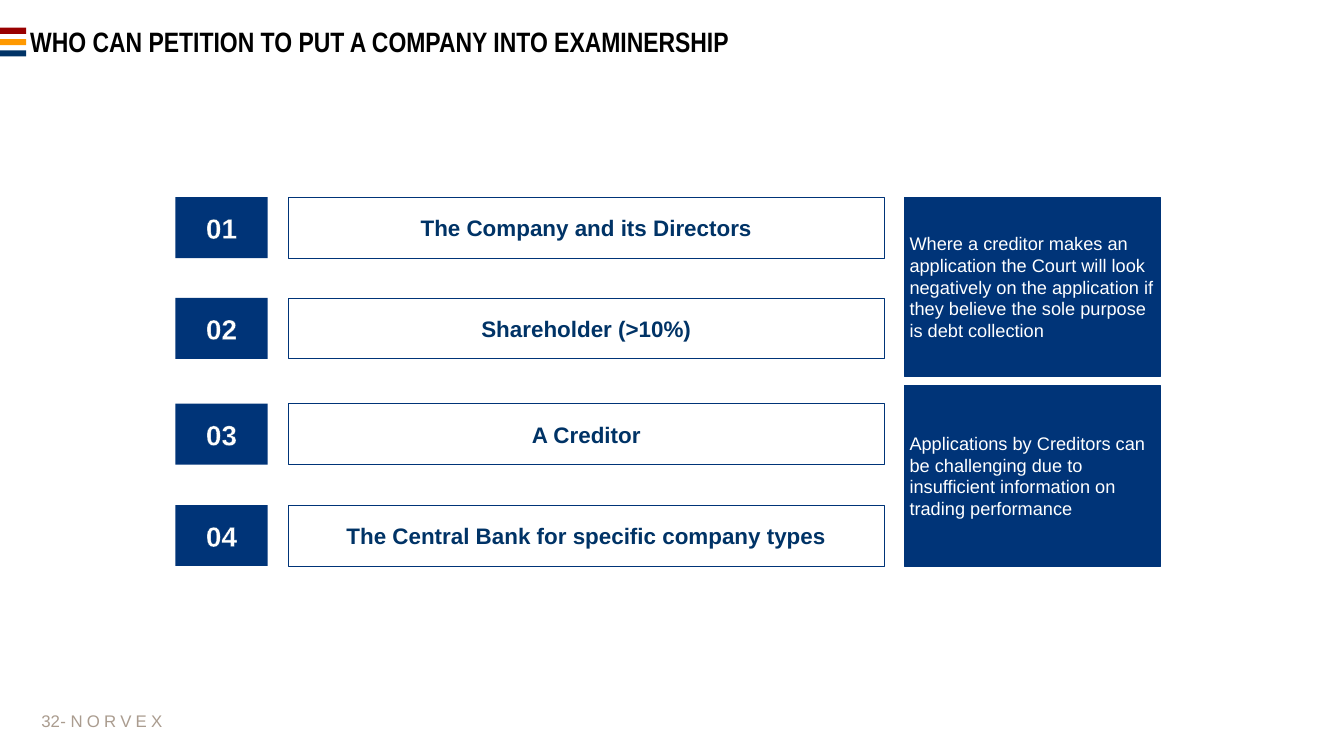
"""Build the slide on who can petition to put a company into examinership."""
from dataclasses import dataclass

from lxml import etree
from pptx import Presentation
from pptx.dml.color import RGBColor
from pptx.enum.shapes import MSO_SHAPE
from pptx.enum.text import MSO_ANCHOR, MSO_AUTO_SIZE, PP_ALIGN
from pptx.oxml.ns import qn
from pptx.util import Inches, Pt

RECT = MSO_SHAPE.RECTANGLE
MIDDLE = MSO_ANCHOR.MIDDLE
NO_FIT = MSO_AUTO_SIZE.NONE
LEFT, CENTER, RIGHT = PP_ALIGN.LEFT, PP_ALIGN.CENTER, PP_ALIGN.RIGHT


@dataclass(frozen=True)
class Theme:
    blue: str = "003478"
    navy: str = "003366"
    red: str = "990000"
    orange: str = "FF9900"
    white: str = "FFFFFF"
    black: str = "000000"
    taupe: str = "AA9C8F"
    font: str = "Arial"
    title_font: str = "Arial Narrow"
    title_size: int = 40
    number_size: int = 40
    label_size: int = 32
    note_size: int = 26
    footer_size: int = 24


theme = Theme()


def add_box(x, y, w, h, fill, line=None):
    sp = slide.shapes.add_shape(RECT, Inches(x), Inches(y), Inches(w), Inches(h))
    sp.shadow.inherit = False
    sp.fill.solid()
    sp.fill.fore_color.rgb = RGBColor.from_string(fill)
    if line:
        sp.line.color.rgb = RGBColor.from_string(line)
        sp.line.width = Pt(1)
    else:
        sp.line.fill.background()
    return sp


def write(sp, text, size, color, align=LEFT, bold=False, font=theme.font, wrap=True):
    tf = sp.text_frame
    tf.word_wrap = wrap
    tf.auto_size = NO_FIT
    tf.vertical_anchor = MIDDLE
    p = tf.paragraphs[0]
    p.alignment = align
    p.font.name = font
    p.font.size = Pt(size)
    p.font.bold = bold
    p.font.color.rgb = RGBColor.from_string(color)
    r = p.add_run()
    r.text = text
    return p


prs = Presentation()
prs.slide_width = Inches(26.67)
prs.slide_height = Inches(15)
slide = prs.slides.add_slide(prs.slide_layouts[5])

for i, color in enumerate((theme.red, theme.orange, theme.navy)):
    add_box(0, 0.55 + 0.225 * i, 0.52, 0.12, color)

title = slide.shapes.title
title.left, title.top = Inches(0.5), Inches(0.46)
title.width, title.height = Inches(25.67), Inches(0.79)
p = write(title, "WHO CAN PETITION TO PUT A COMPANY INTO EXAMINERSHIP",
          theme.title_size, theme.black, bold=True, font=theme.title_font)
p.line_spacing = 0.9

petitioners = [
    (3.91, "The Company and its Directors"),
    (5.91, "Shareholder (>10%)"),
    (8.01, "A Creditor"),
    (10.02, "The Central Bank for specific company types"),
]
for n, (y, label) in enumerate(petitioners, 1):
    sp = add_box(3.48, y, 1.83, 1.21, theme.blue)
    p = write(sp, f"{n:02d}", theme.number_size, theme.white, CENTER, True)
    outline = etree.Element(qn("a:ln"), w=str(Pt(0.75)))
    fill = etree.SubElement(outline, qn("a:solidFill"))
    etree.SubElement(fill, qn("a:srgbClr"), val=theme.navy)
    p.runs[0]._r.get_or_add_rPr().insert(0, outline)

    sp = add_box(5.72, y, 11.83, 1.21, theme.white, theme.blue)
    write(sp, label, theme.label_size, theme.navy, CENTER, True)

notes = [
    (3.91, 3.56, "Where a creditor makes an application the Court will look negatively "
                 "on the application if they believe the sole purpose is debt collection"),
    (7.64, 3.6, "Applications by Creditors can be challenging due to insufficient "
                "information on trading performance"),
]
for y, h, text in notes:
    sp = add_box(17.95, y, 5.07, h, theme.blue, theme.blue)
    write(sp, text, theme.note_size, theme.white)

page = slide.shapes.add_textbox(Inches(0.44), Inches(13.9), Inches(0.75), Inches(0.8))
page.text_frame.margin_left = page.text_frame.margin_right = 0
write(page, "32", theme.footer_size, theme.taupe, RIGHT)

footer = slide.shapes.add_textbox(Inches(1.1), Inches(13.9), Inches(2.29), Inches(0.8))
p = write(footer, "- ", theme.footer_size, theme.taupe, wrap=False)
r = p.add_run()
r.text = "NORVEX"
r._r.get_or_add_rPr().set("spc", "600")

prs.save("out.pptx")
